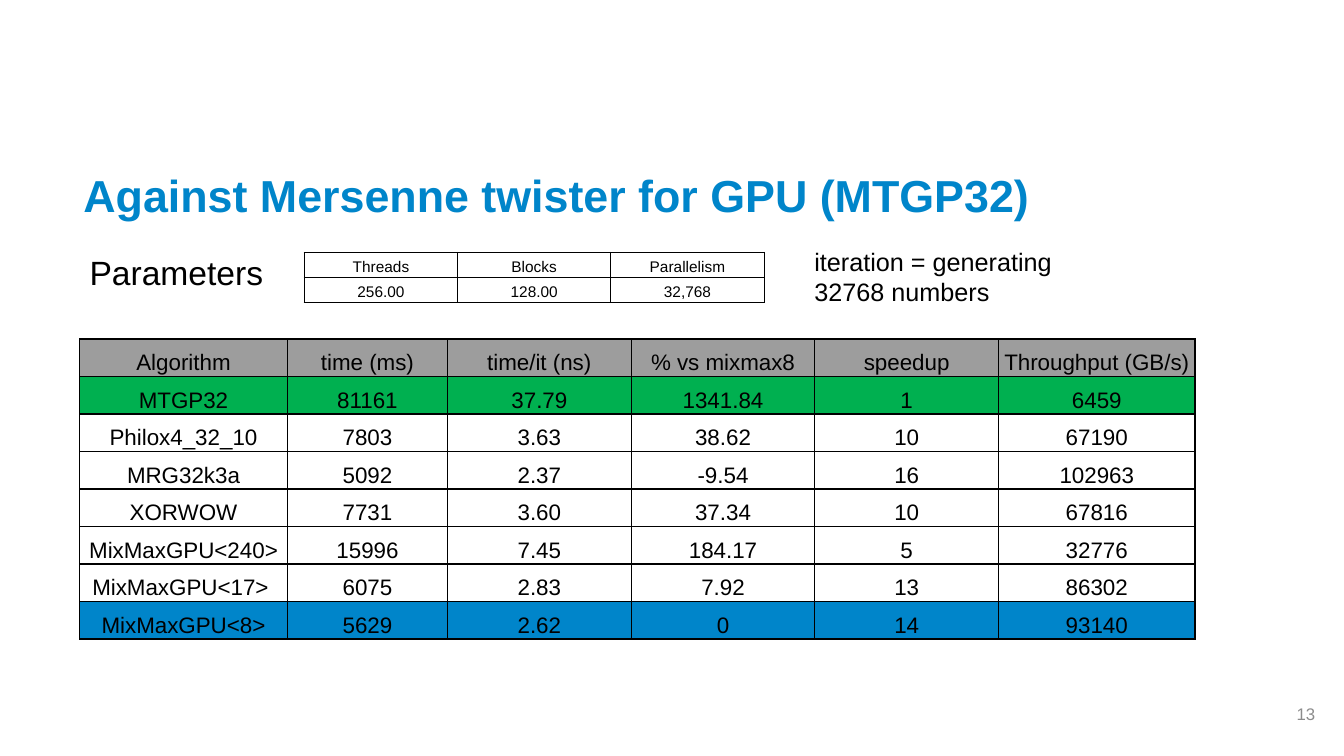
from lxml import etree
from pptx import Presentation
from pptx.dml.color import RGBColor
from pptx.enum import text
from pptx.oxml import ns
from pptx.util import Pt

COLORS = {
    "black": "000000",
    "white": "FFFFFF",
    "blue": "0085CA",
    "green": "00B050",
    "header": "9D9D9D",
    "number": "8C8C8C",
}
MIDDLE = text.MSO_ANCHOR.MIDDLE
TOP = text.MSO_ANCHOR.TOP
LEFT, CENTER, RIGHT = text.PP_ALIGN.LEFT, text.PP_ALIGN.CENTER, text.PP_ALIGN.RIGHT


def write(para, words, size, color, align=LEFT, bold=False):
    para.alignment = align
    span = para.add_run()
    span.text = words
    for name, value in {"name": "Arial", "size": Pt(size), "bold": bold}.items():
        setattr(span.font, name, value)
    span.font.color.rgb = RGBColor.from_string(COLORS[color])


def add_grid(left, top, widths, height, rows, size, inset, spacing, fills):
    """Draw a black-ruled table; fills maps a row number to a colour name."""
    frame = page.shapes.add_table(len(rows), len(widths), Pt(left), Pt(top),
                                  Pt(sum(widths)), Pt(height * len(rows)))
    table = frame.table
    table.first_row = table.horz_banding = False
    for column, width in zip(table.columns, widths):
        column.width = Pt(width)
    for r, row in enumerate(rows):
        table.rows[r].height = Pt(height)
        for c, words in enumerate(row):
            cell = table.cell(r, c)
            cell.vertical_anchor = text.MSO_ANCHOR.BOTTOM
            cell.margin_left = cell.margin_right = Pt(inset[0])
            cell.margin_top = cell.margin_bottom = Pt(inset[1])
            para = cell.text_frame.paragraphs[0]
            para.line_spacing = spacing
            write(para, words, size, "black", CENTER)
            properties = cell._tc.get_or_add_tcPr()
            for side in ("lnL", "lnR", "lnT", "lnB"):
                line = etree.SubElement(properties, ns.qn(f"a:{side}"), w=str(Pt(1)))
                solid = etree.SubElement(line, ns.qn("a:solidFill"))
                etree.SubElement(solid, ns.qn("a:srgbClr"), val=COLORS["black"])
            cell.fill.solid()
            cell.fill.fore_color.rgb = RGBColor.from_string(COLORS[fills.get(r, "white")])


deck = Presentation()
deck.slide_width, deck.slide_height = Pt(960), Pt(540)
page = deck.slides.add_slide(deck.slide_layouts[6])

# Title, labels and page number: place, words, size, colour, alignment, bold, anchor
labels = [
    ((52.5, 112.3, 894, 60.5), "Against Mersenne twister for GPU (MTGP32)",
     32, "blue", LEFT, True, TOP),
    ((889, 489.6, 57.6, 41), "13", 12, "number", RIGHT, False, MIDDLE),
    ((56.9, 172.8, 150, 45), "Parameters", 24, "black", LEFT, False, TOP),
    ((574.6, 168.5, 195.8, 58.3), "iteration = generating 32768 numbers",
     18, "black", LEFT, False, TOP),
]
for place, words, size, color, align, bold, anchor in labels:
    box = page.shapes.add_textbox(*map(Pt, place)).text_frame
    box.word_wrap = True
    box.vertical_anchor = anchor
    for side in ("left", "right", "top", "bottom"):
        setattr(box, f"margin_{side}", Pt(7.2))
    write(box.paragraphs[0], words, size, color, align, bold)

# Launch parameters
parameters = [("Threads", "Blocks", "Parallelism"), ("256.00", "128.00", "32,768")]
add_grid(217.4, 180.4, [109.5] * 3, 17.1, parameters, 11, (2.2, 1.4), 1.15, {})

# Benchmark results
results = [
    ("Algorithm", "time (ms)", "time/it (ns)", "% vs mixmax8", "speedup", "Throughput (GB/s)"),
    ("MTGP32", "81161", "37.79", "1341.84", "1", "6459"),
    ("Philox4_32_10", "7803", "3.63", "38.62", "10", "67190"),
    ("MRG32k3a", "5092", "2.37", "-9.54", "16", "102963"),
    ("XORWOW", "7731", "3.60", "37.34", "10", "67816"),
    ("MixMaxGPU<240>", "15996", "7.45", "184.17", "5", "32776"),
    ("MixMaxGPU<17> ", "6075", "2.83", "7.92", "13", "86302"),
    ("MixMaxGPU<8>", "5629", "2.62", "0", "14", "93140"),
]
add_grid(56.9, 242.1, [148.4, 114.4, 131.2, 131.2, 131.2, 140.4], 26.8, results, 16,
         (0.7, 0.7), 1.0, {0: "header", 1: "green", 7: "blue"})

deck.save("out.pptx")
